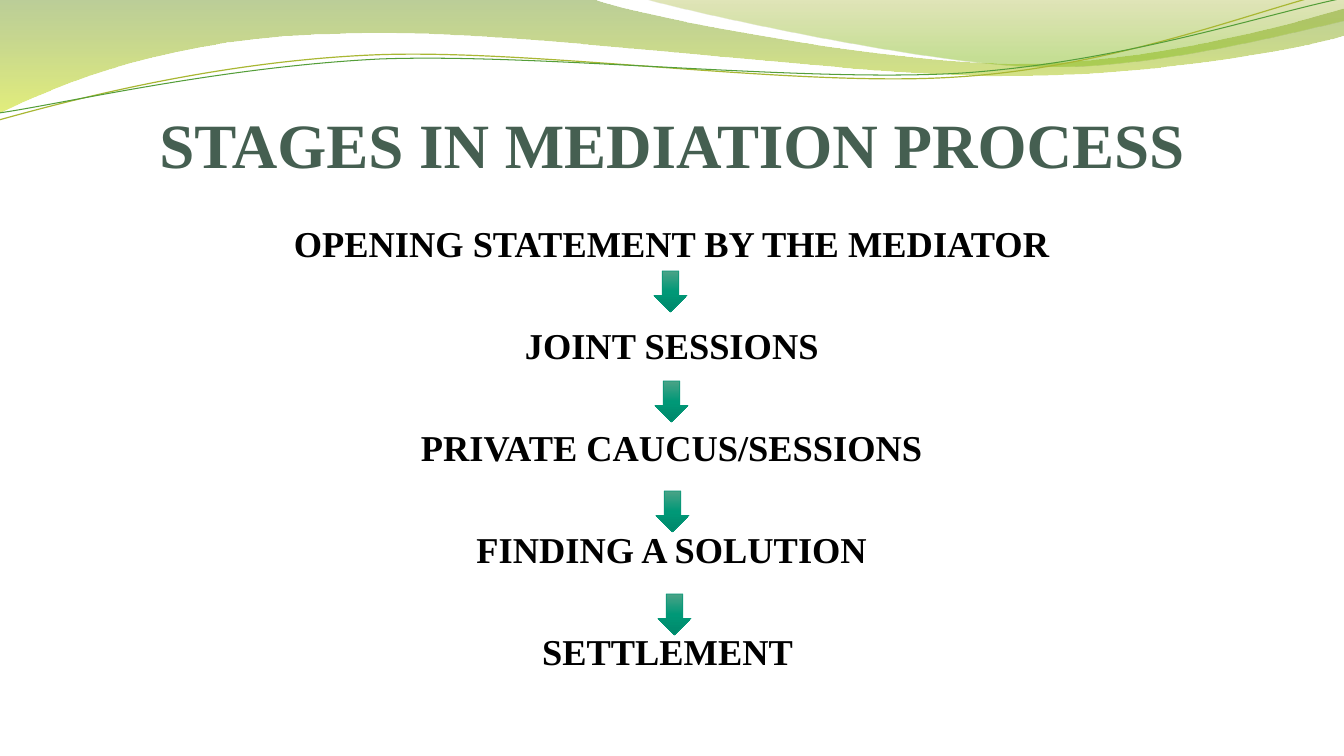
"""Build the slide on the stages in the mediation process."""
from lxml import etree
from pptx import Presentation
from pptx import util as u
from pptx.dml.color import RGBColor
from pptx.enum import shapes, text
from pptx.oxml.ns import qn

SCALE = 914400 / 100.8
THEME = {
    "font": "Times New Roman",
    "head": {"size": u.Pt(45), "color": "455F51"},
    "body": {"size": u.Pt(26), "color": "000000"},
    "edge": "029676",
    "arrow": [(0, "4BA387", 100), (50, "009877", 100), (100, "00876A", 100)],
    "left": [(0, "69921C", 45), (100, "CCE10F", 55)],
    "right": [(0, "9BAA1A", 30), (80, "81BA16", 45)],
    "lime": "A9B733",
    "green": "549E39",
}


def px(num):
    return u.Emu(round(num * SCALE))


def shade(shape, stops):
    shape.fill.gradient()
    shape.fill.gradient_angle = 270
    glist = next(shape._element.iter(qn("a:gsLst")))
    for old in list(glist):
        glist.remove(old)
    for pos, color, alpha in stops:
        stop = etree.SubElement(glist, qn("a:gs"), pos=str(pos * 1000))
        tone = etree.SubElement(stop, qn("a:srgbClr"), val=color)
        if alpha < 100:
            etree.SubElement(tone, qn("a:alpha"), val=str(alpha * 1000))


deck = Presentation()
deck.slide_width, deck.slide_height = px(1344), px(756)
slide = deck.slides.add_slide(deck.slide_layouts[5])

waves = [
    ("left", 0, (-2, 0), [
        [(592, -1)],
        [(639, 17), (891, 64), (1019, 64)], [(1146, 64), (1287, 26), (1344, 9)],
        [(1345, 36)],
        [(1321, 44), (1168, 77), (1002, 76)], [(836, 76), (513, 28), (346, 34)],
        [(173, 36), (61, 84), (-2, 114)]]),
    ("right", 0, (643, -1), [
        [(684, 11), (916, 62), (1033, 66)], [(1149, 70), (1292, 32), (1344, 21)],
        [(1344, 0)]]),
    ("lime", 0.85, (-1, 120), [
        [(64, 102), (212, 62), (372, 55)], [(531, 48), (795, 88), (957, 77)],
        [(1119, 67), (1261, 8), (1341, -10)]]),
    ("green", 0.75, (-1, 113), [
        [(62, 104), (220, 67), (380, 59)], [(541, 53), (802, 83), (963, 73)],
        [(1123, 62), (1265, 14), (1344, -2)]]),
]
for name, width, start, parts in waves:
    pen = slide.shapes.build_freeform(px(start[0]), px(start[1]))
    dots = [(px(x), px(y)) for part in parts for x, y in part]
    pen.add_line_segments(dots, close=not width)
    wave = pen.convert_to_shape()
    wave.shadow.inherit = False
    lines = wave._element.iter(qn("a:lnTo"))
    lines = iter(list(lines))
    for part in parts:
        group = [next(lines) for _ in part]
        if len(group) == 3:
            curve = etree.Element(qn("a:cubicBezTo"))
            group[0].addprevious(curve)
            for line in group:
                curve.append(line[0])
                line.getparent().remove(line)
    if width:
        wave.fill.background()
        wave.line.color.rgb = RGBColor.from_string(THEME[name])
        wave.line.width = u.Pt(width)
    else:
        wave.line.fill.background()
        shade(wave, THEME[name])

stages = ["OPENING STATEMENT BY THE MEDIATOR", "JOINT SESSIONS",
          "PRIVATE CAUCUS/SESSIONS", "FINDING A SOLUTION", "SETTLEMENT "]
title = slide.shapes.title
body = slide.shapes.add_textbox(0, 0, 0, 0)
blocks = [
    (title, "head", ["STAGES IN MEDIATION PROCESS"], 102, 79, 0, text.MSO_ANCHOR.BOTTOM),
    (body, "body", stages, 217, 484, 41.75, text.MSO_ANCHOR.TOP),
]
for box, role, lines, top, high, gap, anchor in blocks:
    place = {"left": px(67), "top": px(top), "width": px(1210), "height": px(high)}
    for key, val in place.items():
        setattr(box, key, val)
    frame = box.text_frame
    form = {"word_wrap": True, "auto_size": text.MSO_AUTO_SIZE.NONE,
            "vertical_anchor": anchor, "margin_left": 0, "margin_right": 0,
            "margin_top": px(4), "margin_bottom": 0}
    for key, val in form.items():
        setattr(frame, key, val)
    frame.text = "\n".join(lines)
    for para in frame.paragraphs:
        para.alignment = text.PP_ALIGN.CENTER
        para.space_before, para.space_after = u.Pt(0), u.Pt(gap)
        font = para.runs[0].font
        look = {"name": THEME["font"], "size": THEME[role]["size"], "bold": True}
        for key, val in look.items():
            setattr(font, key, val)
        font.color.rgb = RGBColor.from_string(THEME[role]["color"])

for left, top in [(654, 271), (655, 381), (656, 491), (658, 594)]:
    arrow = slide.shapes.add_shape(
        shapes.MSO_SHAPE.DOWN_ARROW, px(left), px(top), px(33), px(41))
    arrow.shadow.inherit = False
    shade(arrow, THEME["arrow"])
    arrow.line.color.rgb = RGBColor.from_string(THEME["edge"])
    arrow.line.width = u.Pt(0.5)

deck.save("out.pptx")
